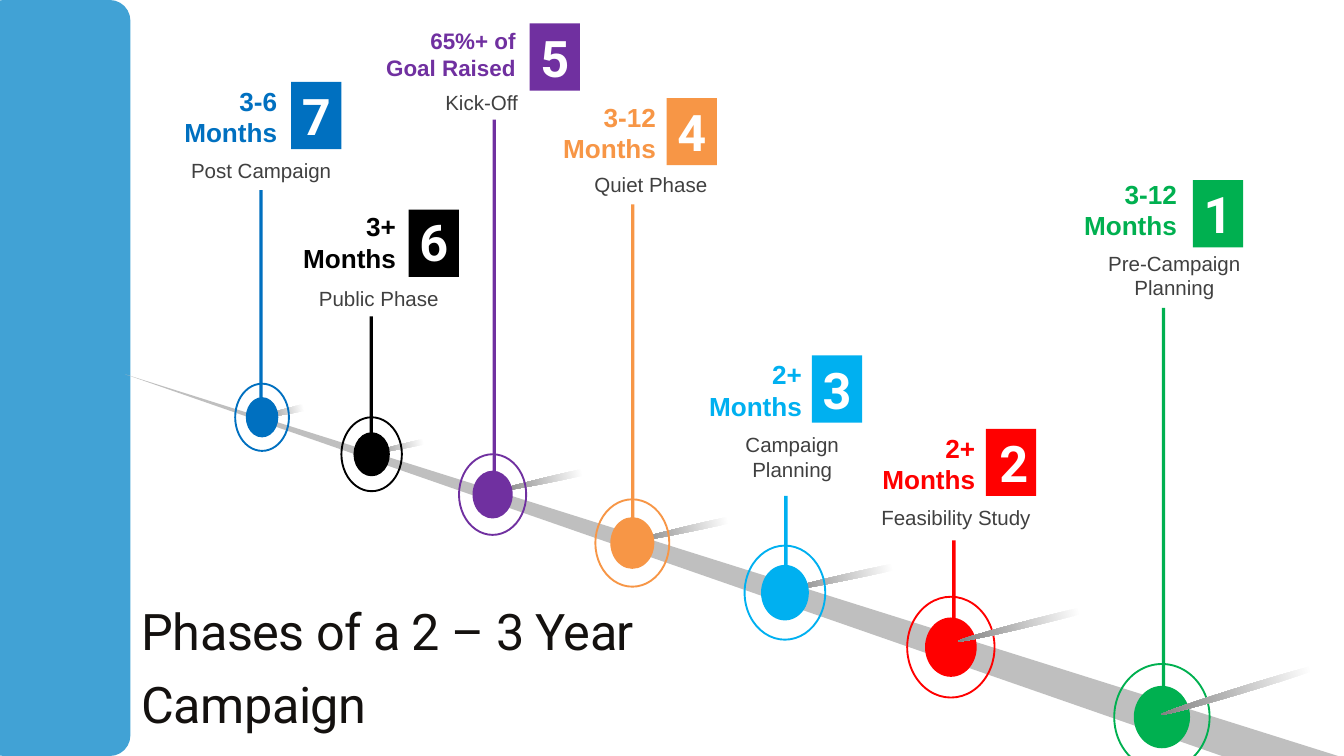
from collections import namedtuple
from copy import deepcopy

from pptx import Presentation
from pptx.dml.color import RGBColor
from pptx.enum.shapes import MSO_SHAPE as Kind
from pptx.enum.text import MSO_AUTO_SIZE as Auto, PP_ALIGN as Align
from pptx.util import Pt

WHITE = RGBColor(0xFF, 0xFF, 0xFF)
SMOKE = RGBColor(0x80, 0x80, 0x80)
BEAM = RGBColor(0xBF, 0xBF, 0xBF)
SIDE = RGBColor(0x41, 0xA2, 0xD5)
TEXT = RGBColor(0x40, 0x40, 0x40)
INK = RGBColor(0x14, 0x11, 0x0F)
GREEN = RGBColor(0x00, 0xB0, 0x50)
RED = RGBColor(0xFF, 0x00, 0x00)
SKY = RGBColor(0x00, 0xB0, 0xF0)
AMBER = RGBColor(0xF7, 0x96, 0x46)
PLUM = RGBColor(0x70, 0x30, 0xA0)
BLACK = RGBColor(0x00, 0x00, 0x00)
BLUE = RGBColor(0x00, 0x70, 0xC0)

NOTE = dict(name="Arial", size=Pt(22))
TIME = dict(name="Arial", size=Pt(28), bold=True)
DIGIT = dict(name="Roboto", size=Pt(54), bold=True)
HEAD = dict(name="Roboto", size=Pt(54))

# Offsets and boxes in points; card offsets count from the badge corner
# time: right edge, top, width; note: left, top, width
# stem: left, top, height; glow: left, top, height, angle, white stop
Phase = namedtuple(
    "Phase", "num tone span label badge time note digit ring stem glow")
PHASES = [
    Phase(7, BLUE, "3-6\nMonths", "Post Campaign", (311.8, 87.8),
          (-7.9, 0, 176), (-126, 77.8, 188), (0, 0), (252, 411.1, 57.6, 72),
          (277.9, 203.8, 237.6), (275, 420.5, 8.6, 167.6, 0.76)),
    Phase(6, BLACK, "3+\nMonths", "Public Phase", (437.8, 224.6),
          (-6.5, -2.2, 122), (-126, 78.5, 188), (0, -2.2),
          (365.8, 447.1, 64.8, 79.2),
          (396, 339.1, 144), (391, 460.8, 6.5, 167.6, 0.7)),
    Phase(5, PLUM, "65%+ of\nGoal Raised", "Kick-Off", (567.4, 25.2),
          (-7.9, 0.7, 176), (-135.4, 67.7, 168), (0, 0),
          (491.8, 486.7, 72, 86.4),
          (527.8, 128.2, 403.2), (532.1, 499.7, 7.2, 167.6, 0.56)),
    Phase(4, AMBER, "3-12\nMonths", "Quiet Phase", (714.2, 105.1),
          (-4.3, 0, 122), (-110.9, 75.6, 188), (0, 0),
          (637.9, 535, 79.2, 93.6),
          (676.1, 218.9, 360), (676.1, 553.7, 7.2, 167.6, 0.5)),
    Phase(3, SKY, "2+\nMonths", "Campaign Planning", (869.8, 380.9),
          (-3.6, 0, 134), (-90, 78.5, 138), (0, 0),
          (797.8, 584.6, 86.4, 100.8),
          (840.2, 531.4, 108), (838.1, 607, 7.2, 167.8, 0.43)),
    Phase(2, RED, "2+\nMonths", "Feasibility Study", (1056.2, 459.4),
          (-4.3, 0, 134), (-126, 77.8, 188), (2.9, 0),
          (972, 639.4, 93.6, 108),
          (1020.2, 578.9, 108), (1023.8, 658.1, 7.2, 166, 0.36)),
    Phase(1, GREEN, "3-12\nMonths", "Pre-Campaign Planning", (1278, 193),
          (-10, -5.8, 122), (-113.8, 72, 188), (0, 0),
          (1193.8, 711.4, 102.2, 113.8),
          (1244.9, 329.8, 432), (1239.8, 731.5, 7.2, 163, 0.2)),
]


def paint(shape, fill=None, line=None):
    shape.shadow.inherit = False
    if fill is None:
        shape.fill.background()
    else:
        shape.fill.solid()
        shape.fill.fore_color.rgb = fill
    if line is None:
        shape.line.fill.background()
    else:
        shape.line.color.rgb = line
        shape.line.width = Pt(2)
    return shape


def form(slide, kind, box, fill=None, line=None):
    shape = slide.shapes.add_shape(kind, *map(Pt, box))
    return paint(shape, fill, line)


def write(slide, box, text, look, tone, align=Align.LEFT):
    frame = slide.shapes.add_textbox(*map(Pt, box)).text_frame
    frame.word_wrap = True
    frame.auto_size = Auto.SHAPE_TO_FIT_TEXT
    frame.text = text
    for para in frame.paragraphs:
        para.alignment = align
        font = para.runs[0].font
        for key, value in look.items():
            setattr(font, key, value)
        font.color.rgb = tone
    return frame


def add_side(slide, box):
    bar = form(slide, Kind.ROUNDED_RECTANGLE, box, SIDE)
    bar.adjustments[0] = 0.14


def add_beam(slide, box):
    """Wedge that widens from the upper left to the lower right."""
    left, top, width, height = box
    base = top + height
    pen = slide.shapes.build_freeform(left, top, scale=Pt(1))
    pen.add_line_segments([(left + width, base), (left + width - 125, base)])
    paint(pen.convert_to_shape(), BEAM)


def add_glow(slide, box, angle, stop):
    glow = form(slide, Kind.OVAL, box)
    glow.rotation = angle
    glow.fill.gradient()
    glow.fill.gradient_angle = 0
    first = glow.fill.gradient_stops[0]._gs
    first.addnext(deepcopy(first))
    tones = [(0, WHITE), (stop, WHITE), (1, SMOKE)]
    for mark, (place, tone) in zip(glow.fill.gradient_stops, tones):
        mark.position = place
        mark.color.rgb = tone


def add_card(slide, phase):
    """Badge with its number, duration and caption."""
    left, top = phase.badge
    form(slide, Kind.RECTANGLE, (left, top, 54, 72), phase.tone)
    dx, dy = phase.digit
    write(slide, (left + dx, top + dy, 49.7, 72.7), str(phase.num),
          DIGIT, WHITE, Align.RIGHT)
    edge, dy, width = phase.time
    look = TIME | {"size": Pt(24)} if phase.num == 5 else TIME
    write(slide, (left + edge - width, top + dy, width, 74.9), phase.span,
          look, phase.tone, Align.RIGHT)
    dx, dy, width = phase.note
    write(slide, (left + dx, top + dy, width, 33.8), phase.label,
          NOTE, TEXT, Align.CENTER)


def add_mark(slide, phase):
    """Dot in a ring, with a stem and a streak of light."""
    left, top, width, height = phase.ring
    x, y, thick, angle, stop = phase.glow
    streak = (x, y, 208.8, thick), angle, stop
    front = phase.num <= 2
    if not front:
        add_glow(slide, *streak)
    wide, high = 0.57 * width, 0.57 * height
    dot = (left + (width - wide) / 2, top + (height - high) / 2, wide, high)
    form(slide, Kind.OVAL, dot, phase.tone, phase.tone)
    form(slide, Kind.OVAL, phase.ring, line=phase.tone)
    x, y, tall = phase.stem
    form(slide, Kind.RECTANGLE, (x, y, 3.6, tall), phase.tone)
    if front:
        add_glow(slide, *streak)


def add_title(slide, box):
    frame = write(slide, box, "Phases of a 2 – 3 Year Campaign", HEAD, INK)
    for side in ("left", "top", "right", "bottom"):
        setattr(frame, "margin_" + side, 0)
    para = frame.paragraphs[0]
    para.line_spacing = Pt(78)
    para.runs[0]._r.get_or_add_rPr().set("spc", "-60")


def main():
    deck = Presentation()
    deck.slide_width, deck.slide_height = Pt(1440), Pt(810)
    slide = deck.slides.add_slide(deck.slide_layouts[6])
    add_side(slide, (-18, 0, 157.7, 810))
    add_beam(slide, (133.9, 401, 1306.1, 411.2))
    for phase in PHASES:
        add_card(slide, phase)
    for phase in PHASES:
        add_mark(slide, phase)
    add_title(slide, (151.9, 630, 635.8, 151.2))
    deck.save("out.pptx")


if __name__ == "__main__":
    main()
